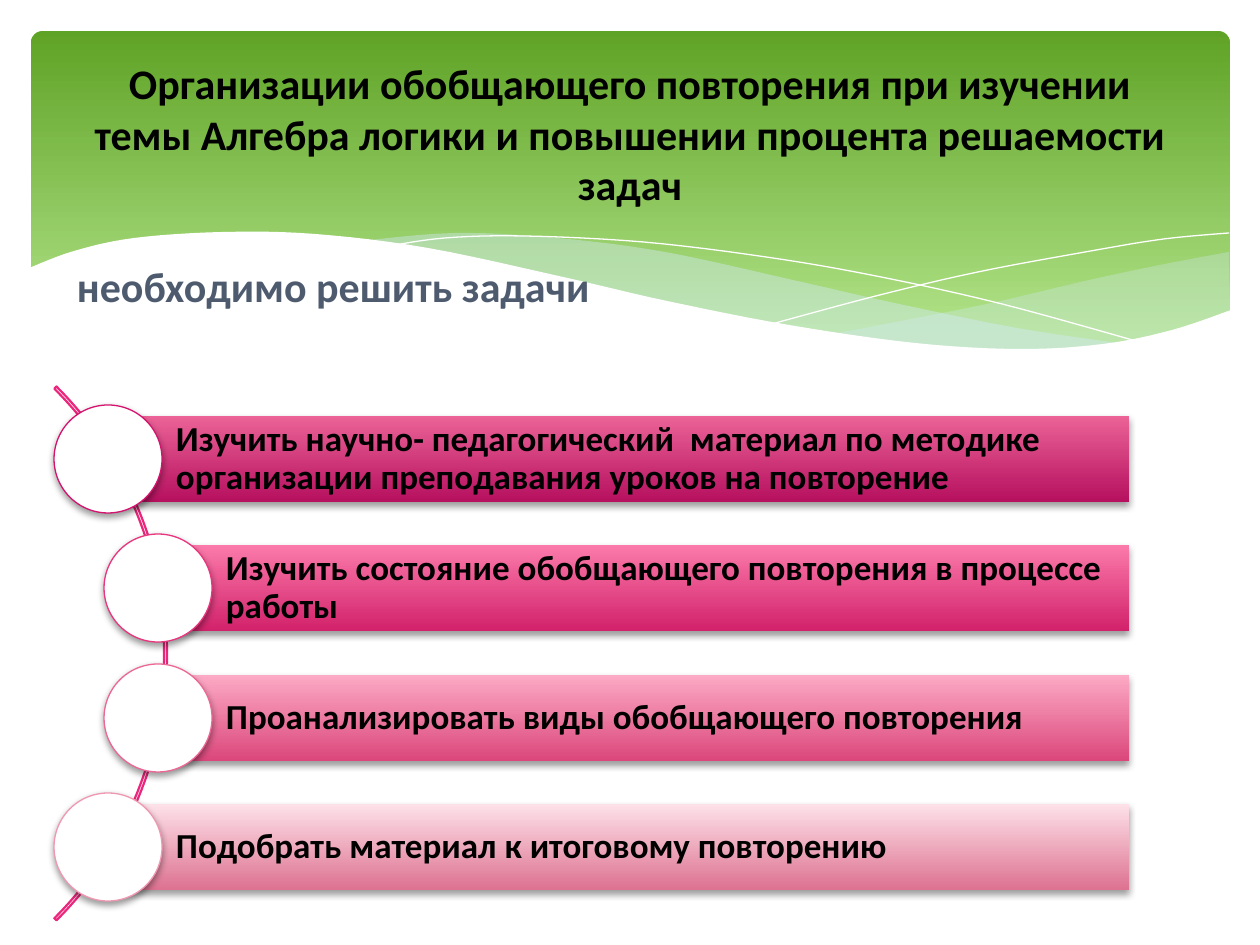
from lxml import etree
from pptx import Presentation
from pptx.dml.color import RGBColor
from pptx.enum.shapes import MSO_SHAPE
from pptx.enum.text import MSO_ANCHOR, PP_ALIGN
from pptx.oxml.ns import qn
from pptx.util import Pt

RECT, ROUND = MSO_SHAPE.RECTANGLE, MSO_SHAPE.ROUNDED_RECTANGLE
OVAL, ARC = MSO_SHAPE.OVAL, MSO_SHAPE.BLOCK_ARC
TOP, MIDDLE = MSO_ANCHOR.TOP, MSO_ANCHOR.MIDDLE
LEFT, CENTER = PP_ALIGN.LEFT, PP_ALIGN.CENTER
PX = 9144000 / 1260

TITLE = "Организации обобщающего повторения при изучении темы Алгебра логики и повышении процента решаемости задач"
TASKS = [
    (108, "Изучить научно- педагогический  материал по методике организации преподавания уроков на повторение",
     "EB6397", "B6105F", "D4136F"),
    (158, "Изучить состояние обобщающего повторения в процессе работы", "FB7AAA", "D2226B", "E9347F"),
    (158, "Проанализировать виды обобщающего повторения", "FCAAC5", "DB477B", "EC6796"),
    (108, "Подобрать материал к итоговому повторению", "FDE1E9", "DD7291", "F098B2"),
]
RIGHT_WAVE_TOP = [(1229, 252), (1160, 265), (1085, 281), (982, 305), (833, 334)]
RIGHT_WAVE_BOTTOM = [(833, 334), (922, 345), (1012, 350), (1099, 345), (1178, 330), (1230, 311)]
LONG_WAVE_TOP = [(1125, 344), (1017, 328), (890, 302), (793, 280), (665, 252), (557, 238), (455, 233), (360, 241)]
LONG_WAVE_BOTTOM = [(360, 241), (456, 256), (566, 280), (713, 312), (838, 335), (942, 348), (1031, 350), (1125, 344)]
FALLING_LINE = [(389, 246), (445, 238), (524, 236), (643, 242), (766, 257), (876, 276), (1002, 304), (1143, 343)]
RISING_LINE = [(772, 324), (876, 296), (978, 272), (1091, 251), (1164, 239), (1229, 233)]
WHITE_EDGE = [(1231, 310), (1172, 330), (1103, 344), (1019, 349), (915, 343), (789, 325), (667, 301),
              (563, 277), (428, 248), (315, 234), (223, 232), (134, 238), (74, 251), (29, 268)]


def px(n):
    return round(n * PX)


def rgb(color):
    return RGBColor.from_string(color)


def smooth(points, steps=6):
    padded = [points[0], *points, points[-1]]
    curve = []
    for a, b, c, d in zip(padded, padded[1:], padded[2:], padded[3:]):
        for i in range(steps):
            t = i / steps
            curve.append(tuple(
                0.5 * (2 * q + (r - p) * t + (2 * p - 5 * q + 4 * r - s) * t**2 + (3 * q - p - 3 * r + s) * t**3)
                for p, q, r, s in zip(a, b, c, d)))
    return curve + [points[-1]]


def write(sp, text, size=20, color="000000", align=LEFT, anchor=MIDDLE, insets=(13, 6, 13, 6),
          spacing=None, before=0):
    tf = sp.text_frame
    tf.word_wrap = True
    tf.vertical_anchor = anchor
    tf.margin_left, tf.margin_top, tf.margin_right, tf.margin_bottom = map(px, insets)
    p = tf.paragraphs[0]
    p.alignment = align
    p.line_spacing = spacing
    p.space_before = Pt(before)
    r = p.add_run()
    r.text = text
    r.font.name = "Calibri"
    r.font.size = Pt(size)
    r.font.bold = True
    r.font.color.rgb = rgb(color)


class Deck:
    def __init__(self, prs):
        self.s = prs.slides.add_slide(prs.slide_layouts[6])

    def paint(self, sp, fill=None, alpha=None, line=None, width=0.75, shadow=False):
        if fill is None:
            sp.fill.background()
        elif isinstance(fill, str):
            sp.fill.solid()
            sp.fill.fore_color.rgb = rgb(fill)
        else:
            sp.fill.gradient()
            sp.fill.gradient_angle = 270
            for stop, (position, color) in zip(sp.fill.gradient_stops, fill):
                stop.position = position
                stop.color.rgb = rgb(color)
        if alpha:
            clr = sp._element.spPr.find(qn("a:solidFill"))[0]
            etree.SubElement(clr, qn("a:alpha"), val=str(alpha * 1000))
        if line:
            sp.line.color.rgb = rgb(line)
            sp.line.width = Pt(width)
        else:
            sp.line.fill.background()
        sp.shadow.inherit = False
        if shadow:
            effects = sp._element.spPr.find(qn("a:effectLst"))
            outer = etree.SubElement(effects, qn("a:outerShdw"), blurRad=str(Pt(4)), dist=str(Pt(2)),
                                     dir="5400000", rotWithShape="0")
            clr = etree.SubElement(outer, qn("a:srgbClr"), val="000000")
            etree.SubElement(clr, qn("a:alpha"), val="38000")
        return sp

    def shape(self, kind, x, y, w, h, adjust=(), **style):
        sp = self.s.shapes.add_shape(kind, px(x), px(y), px(w), px(h))
        for i, value in enumerate(adjust):
            sp.adjustments[i] = value
        return self.paint(sp, **style)

    def outline(self, points, close=True, **style):
        pts = [(px(x), px(y)) for x, y in points]
        fb = self.s.shapes.build_freeform(*pts[0], scale=1.0)
        fb.add_line_segments(pts[1:], close=close)
        return self.paint(fb.convert_to_shape(), **style)

    def text(self, x, y, w, h, text, **fmt):
        write(self.s.shapes.add_textbox(px(x), px(y), px(w), px(h)), text, **fmt)

    def task(self, x, y, text, top, bottom, ring):
        bar = self.shape(RECT, x, y, 1129 - x, 86, fill=[(0, top), (1, bottom)], shadow=True)
        write(bar, text, insets=(68, 7, 7, 7), spacing=0.9)
        self.shape(OVAL, x - 54, y - 11, 108, 108, fill="FFFFFF", line=ring, shadow=True)


def main():
    prs = Presentation()
    prs.slide_width, prs.slide_height = px(1260), px(945)
    deck = Deck(prs)
    deck.shape(ROUND, 31, 31, 1199, 340, adjust=[0.034], fill=[(0, "5FA326"), (0.9, "B2E389")])
    deck.outline(smooth(RIGHT_WAVE_TOP) + smooth(RIGHT_WAVE_BOTTOM), fill="D6ECFF", alpha=29)
    deck.outline(smooth(LONG_WAVE_TOP) + smooth(LONG_WAVE_BOTTOM), fill="D6ECFF", alpha=40)
    for curve in (FALLING_LINE, RISING_LINE):
        deck.outline(smooth(curve), close=False, line="FFFFFF", width=0)
    deck.outline(smooth(WHITE_EDGE) + [(29, 415), (1231, 415)], fill="FFFFFF")
    deck.text(64, 255, 1076, 149, "необходимо решить задачи", size=24, color="4E5B6F", anchor=TOP, before=5)
    deck.text(63, 47, 1134, 173, TITLE, size=24, align=CENTER)
    deck.shape(ARC, -588, 276, 755, 755, adjust=[189, 27, 0.004], line="EA277C", width=1.25)
    for i, (x, *rest) in enumerate(TASKS):
        deck.task(x, round(416 + 129.4 * i), *rest)
    prs.save("out.pptx")


if __name__ == "__main__":
    main()
